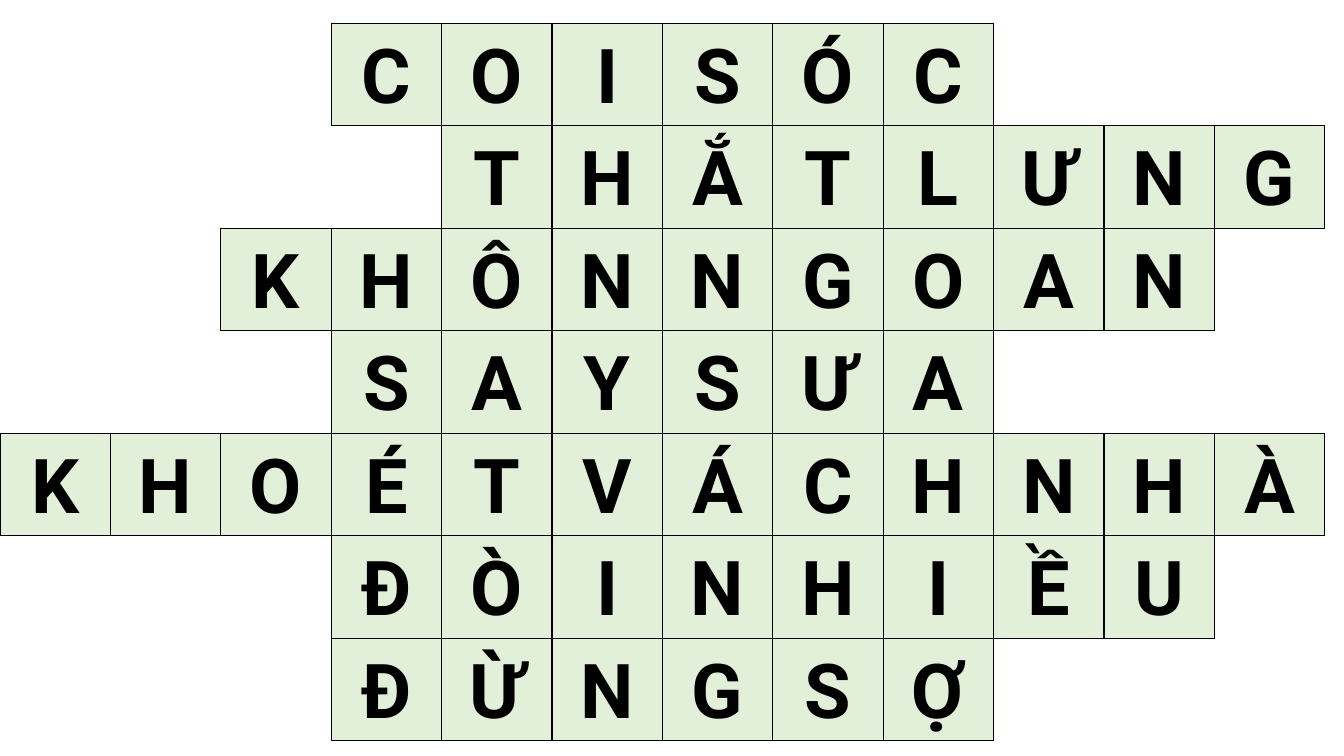
"""Builds a slide with a solved Vietnamese crossword grid."""
from lxml import etree
from pptx import Presentation
from pptx.dml.color import RGBColor
from pptx.enum.text import MSO_ANCHOR, PP_ALIGN
from pptx.oxml.ns import qn
from pptx.util import Inches, Pt

CENTER = PP_ALIGN.CENTER
MIDDLE = MSO_ANCHOR.MIDDLE
BLACK, WHITE, GREEN = "000000", "FFFFFF", "E2F0D9"
COLUMN_COUNT = 12
ANSWERS = [
    (3, "COISÓC"),
    (4, "THẮTLƯNG"),
    (2, "KHÔNNGOAN"),
    (3, "SAYSƯA"),
    (0, "KHOÉTVÁCHNHÀ"),
    (3, "ĐÒINHIỀU"),
    (3, "ĐỪNGSỢ"),
]
SIDES = {"lnL": (0, -1), "lnR": (0, 1), "lnT": (-1, 0), "lnB": (1, 0)}


def write_text(cell, text, size, color, font="Roboto", bold=True):
    cell.vertical_anchor = MIDDLE
    cell.margin_left = cell.margin_right = Inches(0.07)
    cell.margin_top = cell.margin_bottom = 0
    paragraph = cell.text_frame.paragraphs[0]
    paragraph.alignment = CENTER
    paragraph.line_spacing = 1.07
    paragraph.space_after = Pt(8)
    run = paragraph.add_run()
    run.text = text
    run.font.name = font
    run.font.size = Pt(size)
    run.font.bold = bold
    run.font.color.rgb = RGBColor.from_string(color)


def set_border(cell, side, position, color):
    line = etree.Element(qn(f"a:{side}"), w=str(Pt(1)))
    if color:
        fill = etree.SubElement(line, qn("a:solidFill"))
        etree.SubElement(fill, qn("a:srgbClr"), val=color)
    else:
        etree.SubElement(line, qn("a:noFill"))
    cell._tc.get_or_add_tcPr().insert(position, line)


presentation = Presentation()
presentation.slide_width = Inches(13.33)
presentation.slide_height = Inches(7.5)
slide = presentation.slides.add_slide(presentation.slide_layouts[6])

table = slide.shapes.add_table(
    len(ANSWERS), COLUMN_COUNT, 0, Inches(0.23), Inches(13.14), Inches(7.12)
).table
table.first_row = False
table.horz_banding = False

letters = {
    (row, start + offset): letter
    for row, (start, answer) in enumerate(ANSWERS)
    for offset, letter in enumerate(answer)
}

for row in range(len(ANSWERS)):
    for column in range(COLUMN_COUNT):
        cell = table.cell(row, column)
        letter = letters.get((row, column))
        cell.fill.solid()
        cell.fill.fore_color.rgb = RGBColor.from_string(GREEN if letter else WHITE)
        if letter:
            write_text(cell, letter, size=54, color=BLACK)
        for position, (side, (down, across)) in enumerate(SIDES.items()):
            neighbour = letters.get((row + down, column + across))
            set_border(cell, side, position, BLACK if letter or neighbour else None)

presentation.save("out.pptx")
